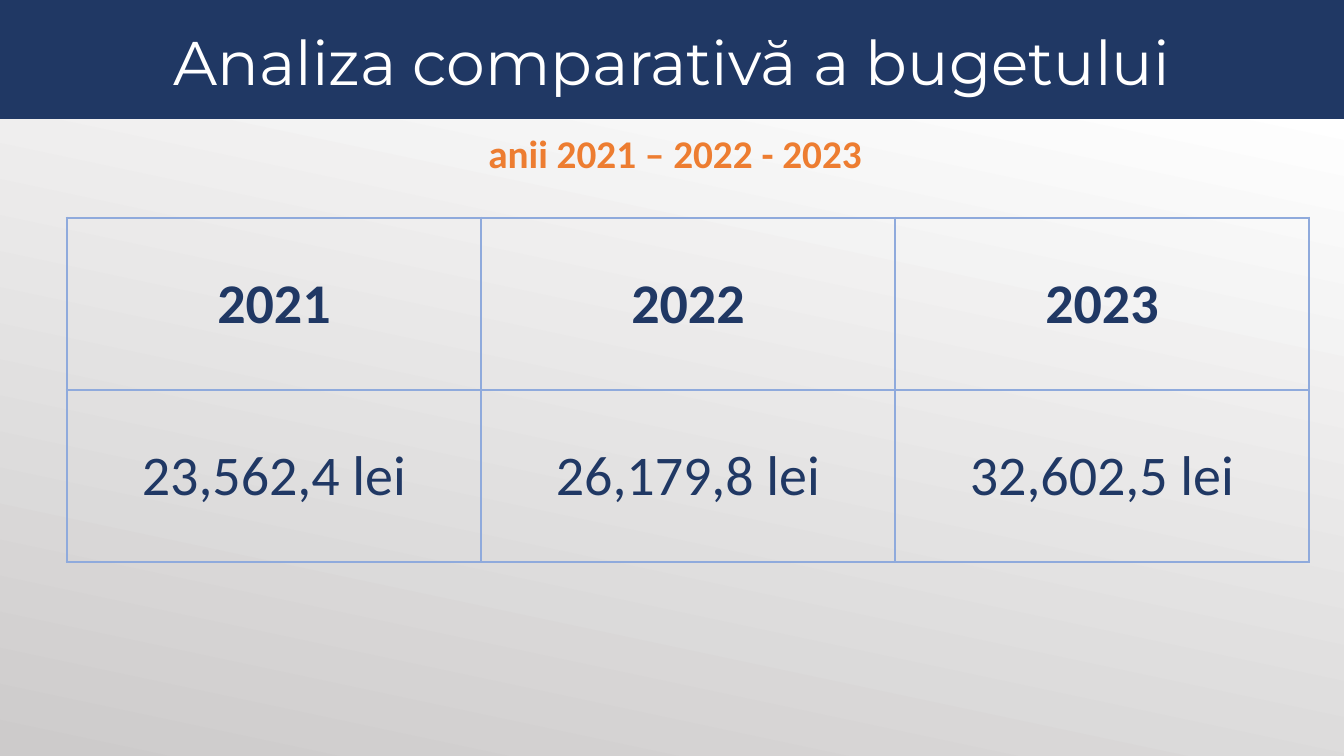
from pptx import Presentation
from pptx.dml.color import RGBColor
from pptx.enum.shapes import MSO_SHAPE
from pptx.enum.text import MSO_ANCHOR, PP_ALIGN
from pptx.oxml import parse_xml
from pptx.oxml.ns import nsdecls
from pptx.util import Pt

SCALE = 914400 / 100.8
NAVY, ORANGE, BLUE, WHITE, GREY = "203864", "ED7D31", "8FAADC", "FFFFFF", "CDCBCB"


def px(count):
    return round(count * SCALE)


def tint(code):
    return RGBColor.from_string(code)


def write(frame, text, size, color, font="Calibri", bold=False, space=None):
    para = frame.paragraphs[0]
    para.alignment = PP_ALIGN.CENTER
    para.line_spacing = space
    run = para.add_run()
    run.text = text
    run.font.name = font
    run.font.size = Pt(size)
    run.font.bold = bold
    run.font.color.rgb = tint(color)


def edge(cell, color, width):
    """Draw the four borders of a table cell."""
    props = cell._tc.get_or_add_tcPr()
    for place, side in enumerate("LRTB"):
        props.insert(place, parse_xml(
            f'<a:ln{side} {nsdecls("a")} w="{Pt(width)}"><a:solidFill>'
            f'<a:srgbClr val="{color}"/></a:solidFill></a:ln{side}>'))


class Page:
    def __init__(self, deck):
        self.slide = deck.slides.add_slide(deck.slide_layouts[6])
        self.shapes = self.slide.shapes

    def back(self, stops, angle):
        fill = self.slide.background.fill
        fill.gradient()
        fill.gradient_angle = angle
        for stop, (place, color) in zip(fill.gradient_stops, stops):
            stop.position = place
            stop.color.rgb = tint(color)

    def band(self, x, y, wide, high, color):
        band = self.shapes.add_shape(
            MSO_SHAPE.RECTANGLE, px(x), px(y), px(wide), px(high))
        band.shadow.inherit = False
        band.fill.solid()
        band.fill.fore_color.rgb = tint(color)
        band.line.fill.background()

    def text(self, x, y, wide, high, text, anchor=MSO_ANCHOR.TOP, **style):
        frame = self.shapes.add_textbox(px(x), px(y), px(wide), px(high)).text_frame
        frame.word_wrap = True
        frame.vertical_anchor = anchor
        write(frame, text, **style)

    def table(self, x, y, wide, high, rows):
        """Draw a grid of equal cells, each wide by high, with a bold first row."""
        count = len(rows[0])
        table = self.shapes.add_table(
            len(rows), count, px(x), px(y),
            px(wide * count), px(high * len(rows))).table
        table.first_row = table.horz_banding = False
        for col in table.columns:
            col.width = px(wide)
        for r, row in enumerate(rows):
            table.rows[r].height = px(high)
            for c, text in enumerate(row):
                cell = table.cell(r, c)
                cell.fill.background()
                cell.vertical_anchor = MSO_ANCHOR.MIDDLE
                edge(cell, BLUE, 2.25)
                write(cell.text_frame, text, 40, NAVY, bold=r == 0)


def main():
    deck = Presentation()
    deck.slide_width, deck.slide_height = px(1344), px(756)
    page = Page(deck)
    page.back([(0.1, WHITE), (1, GREY)], 258)
    page.band(0, 0, 1344, 119, NAVY)
    page.text(17, 25, 1310, 82, "Analiza comparativă a bugetului", MSO_ANCHOR.MIDDLE,
              size=44, color=WHITE, font="Montserrat", space=0.9)
    page.text(23, 124, 1304, 57, "anii 2021 – 2022 - 2023",
              size=28, color=ORANGE, bold=True)
    page.table(67, 218, 414, 172, [
        ["2021", "2022", "2023"],
        ["23,562,4 lei", "26,179,8 lei", "32,602,5 lei"],
    ])
    deck.save("out.pptx")


if __name__ == "__main__":
    main()
